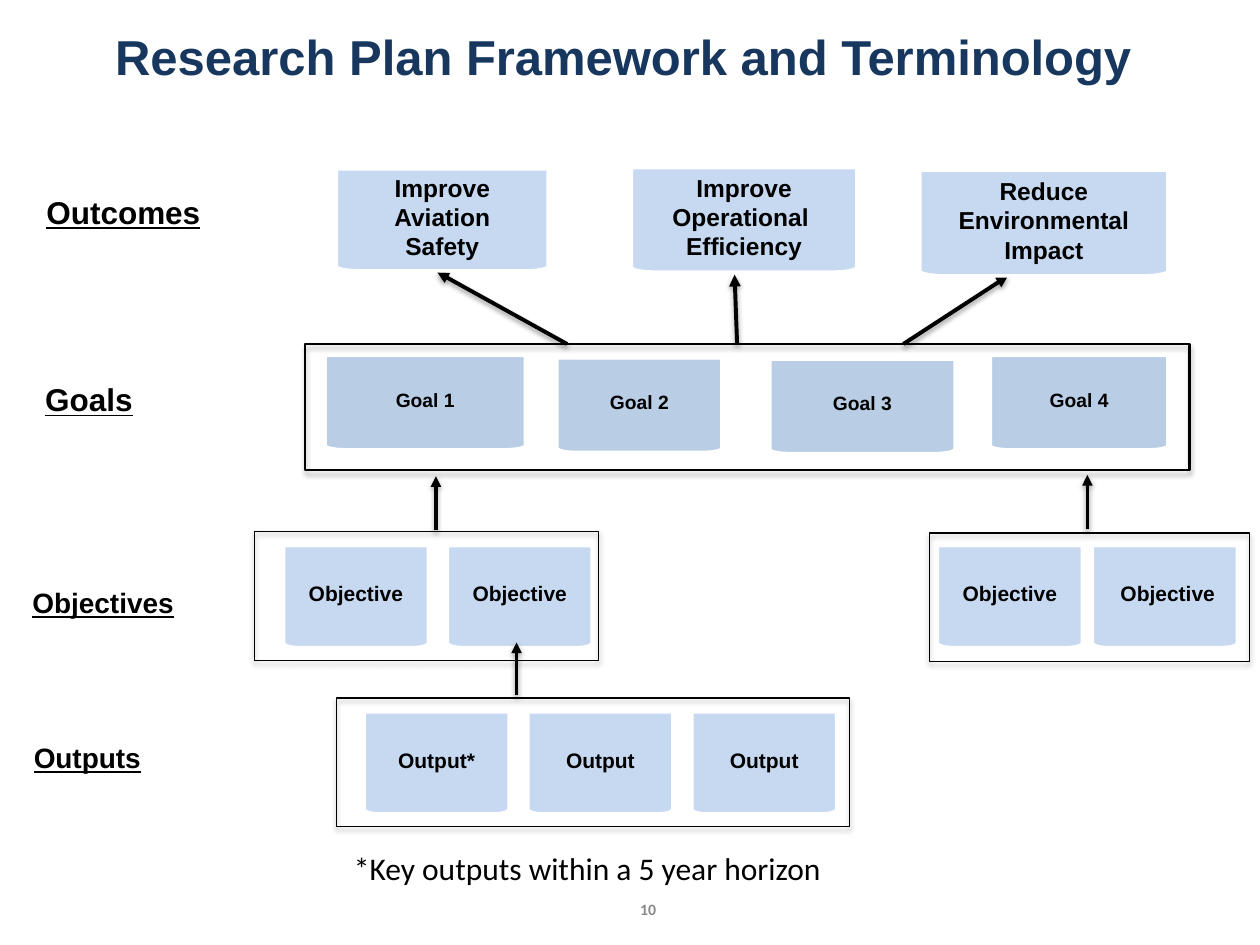
import math
from typing import NamedTuple

import pptx
import pptx.dml.color
import pptx.enum.shapes
import pptx.enum.text
import pptx.oxml
import pptx.oxml.ns
import pptx.util

Inches, Pt = pptx.util.Inches, pptx.util.Pt
RGBColor = pptx.dml.color.RGBColor
ALIGN, ANCHOR = pptx.enum.text.PP_ALIGN, pptx.enum.text.MSO_ANCHOR

BLACK = RGBColor(0x00, 0x00, 0x00)
WHITE = RGBColor(0xFF, 0xFF, 0xFF)
NAVY = RGBColor(0x17, 0x37, 0x5E)
GREY = RGBColor(0x89, 0x89, 0x89)
PALE_BLUE = RGBColor(0xC6, 0xD9, 0xF1)
GOAL_BLUE = RGBColor(0xB9, 0xCD, 0xE5)


class Card(NamedTuple):
    text: str
    x: float
    y: float
    w: float
    h: float
    size: int
    fill: RGBColor = PALE_BLUE


class Label(NamedTuple):
    text: str
    x: float
    y: float
    w: float
    h: float
    size: int


class Frame(NamedTuple):
    x: float
    y: float
    w: float
    h: float
    weight: float


class Arrow(NamedTuple):
    x1: float
    y1: float
    x2: float
    y2: float
    weight: float


OUTCOMES = [
    Card("Improve Operational  Efficiency", 5.01, 1.33, 1.79, 0.83, 14),
    Card("Reduce Environmental Impact", 7.3, 1.35, 1.97, 0.84, 14),
    Card("Improve Aviation Safety", 2.67, 1.34, 1.68, 0.81, 14),
]
GOALS = [
    Card(f"Goal {n}", x, y, w, 0.75, 11, GOAL_BLUE)
    for n, (x, y, w) in enumerate(
        [(2.58, 2.82, 1.59), (4.42, 2.84, 1.31), (6.11, 2.85, 1.47), (7.86, 2.82, 1.41)], 1)
]
OBJECTIVES = [
    Card(text, x, 4.33, 1.15, 0.81, 12)
    for text, x in [("Objective", 2.25), ("Objective", 3.55),
                    ("Objective", 7.44), (" Objective", 8.67)]
]
OUTPUTS = [
    Card(text, 2.89 + 1.3 * i, 5.65, 1.15, 0.81, 12)
    for i, text in enumerate(["Output*", "Output", "Output"])
]
LABELS = [
    Label("Outcomes", 0.27, 1.48, 2.27, 0.4, 18),
    Label("Goals", 0.26, 2.97, 1.46, 0.4, 18),
    Label("Objectives", 0.16, 4.6, 1.46, 0.37, 16),
    Label("Outputs", 0.17, 5.83, 1.46, 0.37, 16),
]
FRAMES = [
    Frame(2.42, 2.73, 7.02, 1, 1.25),
    Frame(2.02, 4.22, 2.73, 1.02, 0.75),
    Frame(7.38, 4.23, 2.54, 1.02, 0.75),
    Frame(2.67, 5.54, 4.07, 1.02, 0.75),
]
OUTCOME_ARROWS = [
    Arrow(4.5, 2.73, 3.47, 2.16, 2.25),
    Arrow(5.85, 2.73, 5.83, 2.18, 2.25),
    Arrow(7.17, 2.73, 8, 2.19, 2.25),
]
UPWARD_ARROWS = [
    Arrow(3.46, 4.21, 3.46, 3.78, 2),
    Arrow(8.63, 4.2, 8.63, 3.77, 2),
    Arrow(4.1, 5.52, 4.1, 5.1, 2),
]


def add_run(p, text: str, size: float, color=BLACK, font="Arial", bold=True, underline=None):
    r = p.add_run()
    r.text = text
    r.font.name, r.font.size = font, Pt(size)
    r.font.bold, r.font.underline = bold, underline
    r.font.color.rgb = color


def add_shadow(sp, alpha: int, dist: float) -> None:
    """Replace the theme shadow with a soft one straight below."""
    sp_pr = sp._element.spPr
    for old in sp_pr.findall(pptx.oxml.ns.qn("a:effectLst")):
        sp_pr.remove(old)
    sp_pr.append(pptx.oxml.parse_xml(
        f'<a:effectLst {pptx.oxml.ns.nsdecls("a")}>'
        f'<a:outerShdw blurRad="{Pt(3.1)}" dist="{Pt(dist)}" dir="5400000" rotWithShape="0">'
        f'<a:srgbClr val="000000"><a:alpha val="{alpha * 1000}"/></a:srgbClr>'
        '</a:outerShdw></a:effectLst>'))


def add_card(s, card: Card) -> None:
    """Draw a box whose bottom corners are flat elliptical curves."""
    x, y, w, h = card[1:5]
    rx, ry = 0.105 * w, 0.045 * h
    angles = [math.radians(15 * i) for i in range(7)]
    right = [(x + w - rx + rx * math.cos(a), y + h - ry + ry * math.sin(a)) for a in angles]
    left = [(2 * x + w - px, py) for px, py in reversed(right)]
    points = [(Inches(px), Inches(py)) for px, py in [(x + w, y), *right, *left]]
    builder = s.shapes.build_freeform(Inches(x), Inches(y))
    builder.add_line_segments(points, close=True)
    sp = builder.convert_to_shape()
    sp.shadow.inherit = False
    sp.fill.solid()
    sp.fill.fore_color.rgb = card.fill
    sp.line.color.rgb, sp.line.width = WHITE, Pt(2)
    tf = sp.text_frame
    tf.word_wrap, tf.vertical_anchor = True, ANCHOR.MIDDLE
    tf.margin_left = tf.margin_right = tf.margin_bottom = Inches(0.16)
    tf.margin_top = Inches(0.11)
    p = tf.paragraphs[0]
    p.alignment = ALIGN.CENTER
    add_run(p, card.text, card.size)


def add_text_box(s, x: float, y: float, w: float, h: float, wrap=True):
    tf = s.shapes.add_textbox(Inches(x), Inches(y), Inches(w), Inches(h)).text_frame
    tf.word_wrap = wrap
    return tf


def add_frame(s, frame: Frame) -> None:
    sp = s.shapes.add_shape(pptx.enum.shapes.MSO_SHAPE.RECTANGLE, *map(Inches, frame[:4]))
    sp.fill.background()
    sp.line.color.rgb, sp.line.width = BLACK, Pt(frame.weight)
    add_shadow(sp, 35, 1.8)


def add_arrow(s, arrow: Arrow) -> None:
    line = s.shapes.add_connector(
        pptx.enum.shapes.MSO_CONNECTOR.STRAIGHT, *map(Inches, arrow[:4]))
    line.line.color.rgb, line.line.width = BLACK, Pt(arrow.weight)
    line.line._get_or_add_ln().append(pptx.oxml.parse_xml(
        f'<a:tailEnd {pptx.oxml.ns.nsdecls("a")} type="triangle"/>'))
    add_shadow(line, 38, 1.6)


def main() -> None:
    prs = pptx.Presentation()
    prs.slide_width, prs.slide_height = Inches(10), Inches(7.5)
    s = prs.slides.add_slide(prs.slide_layouts[5])

    title = s.shapes.title
    title.left, title.top, title.width, title.height = map(Inches, (0, 0.08, 10, 0.72))
    title.text_frame.vertical_anchor = ANCHOR.MIDDLE
    p = title.text_frame.paragraphs[0]
    p.alignment = ALIGN.CENTER
    add_run(p, "Research Plan Framework and Terminology ", 28, NAVY)

    for arrow in OUTCOME_ARROWS:
        add_arrow(s, arrow)
    for card in OUTCOMES + GOALS + OBJECTIVES + OUTPUTS:
        add_card(s, card)
    for label in LABELS:
        tf = add_text_box(s, *label[1:5])
        add_run(tf.paragraphs[0], label.text, label.size, underline=True)
    for arrow in UPWARD_ARROWS:
        add_arrow(s, arrow)
    for frame in FRAMES:
        add_frame(s, frame)

    tf = add_text_box(s, 3.98, 7.09, 2.33, 0.26)
    tf.vertical_anchor = ANCHOR.MIDDLE
    tf.paragraphs[0].alignment = ALIGN.CENTER
    add_run(tf.paragraphs[0], "10", 9, GREY, "Calibri")

    tf = add_text_box(s, 2.71, 6.69, 4.08, 0.4, wrap=False)
    add_run(tf.paragraphs[0], "*Key outputs within a 5 year horizon", 18, font="Calibri", bold=False)

    prs.save("out.pptx")


if __name__ == "__main__":
    main()
